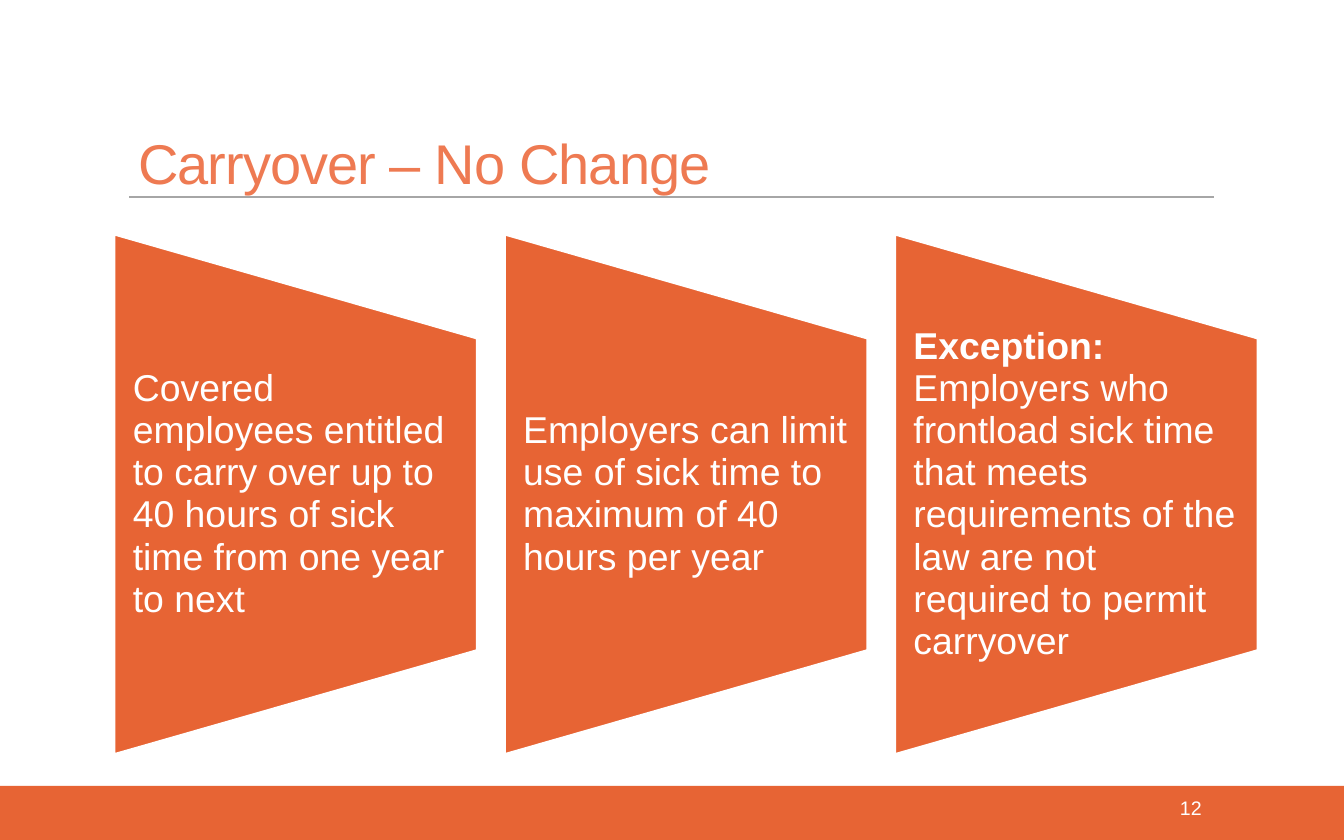
from pptx import Presentation
from pptx.dml.color import RGBColor
from pptx.enum.shapes import MSO_CONNECTOR, MSO_SHAPE
from pptx.enum.text import MSO_ANCHOR, PP_ALIGN
from pptx.oxml.ns import qn
from pptx.util import Cm, Pt
from lxml import etree

RECTANGLE = MSO_SHAPE.RECTANGLE
TRAPEZOID = MSO_SHAPE.FLOWCHART_MANUAL_OPERATION
STRAIGHT = MSO_CONNECTOR.STRAIGHT
TOP, MIDDLE = MSO_ANCHOR.TOP, MSO_ANCHOR.MIDDLE
LEFT, RIGHT = PP_ALIGN.LEFT, PP_ALIGN.RIGHT

COLORS = {"orange": "E76434", "title": "EE7A52", "rule": "A6A6A6", "white": "FFFFFF"}
FONT = "Arial"
PAGE_WIDTH, PAGE_HEIGHT = 25.4, 15.88

# Each panel is a list of (text, bold) spans
PANELS = [
    [("Covered employees entitled to carry over up to 40 hours of sick time "
      "from one year to next", False)],
    [("Employers can limit use of sick time to maximum of 40 hours per year", False)],
    [("Exception: ", True),
     ("Employers who frontload sick time that meets requirements of the law "
      "are not required to permit carryover", False)],
]


def color(name):
    return RGBColor.from_string(COLORS[name])


def add_text(page, box, spans, size, ink="white", align=LEFT, anchor=TOP,
             spacing=1.0, insets=(0.25, 0.13), tracking=None):
    """Place one paragraph of (text, bold) spans in a box given in cm."""
    frame = page.shapes.add_textbox(*map(Cm, box)).text_frame
    side, edge = map(Cm, insets)
    frame_format = {"word_wrap": True, "vertical_anchor": anchor,
                    "margin_left": side, "margin_right": side,
                    "margin_top": edge, "margin_bottom": edge}
    for name, value in frame_format.items():
        setattr(frame, name, value)
    para = frame.paragraphs[0]
    para.alignment = align
    para.line_spacing = spacing
    for text, bold in spans:
        span = para.add_run()
        span.text = text
        for name, value in {"name": FONT, "size": Pt(size), "bold": bold}.items():
            setattr(span.font, name, value)
        span.font.color.rgb = color(ink)
        if tracking is not None:
            span.font._element.set("spc", str(round(tracking * 100)))


def add_filled(page, kind, box):
    shape = page.shapes.add_shape(kind, *map(Cm, box))
    shape.shadow.inherit = False
    shape.fill.solid()
    shape.fill.fore_color.rgb = color("orange")
    shape.line.fill.background()
    return shape


def add_header(page, box):
    """Title with a thin rule along the bottom of the box."""
    left, top, width, height = box
    add_text(page, (left - 0.08, top, 16.18, 1), [("Carryover – No Change", False)],
             30, ink="title", spacing=0.85, tracking=-0.5)
    bottom = top + height
    rule = page.shapes.add_connector(
        STRAIGHT, *map(Cm, (left, bottom, left + width, bottom)))
    rule.line.color.rgb = color("rule")
    rule.line.width = Pt(1)
    etree.SubElement(rule._element.spPr, qn("a:effectLst"))


def add_panel(page, box, spans):
    """Trapezoid turned on its side, wide edge left, with upright text."""
    left, top, width, height = box
    shift = (height - width) / 2
    shape = add_filled(page, TRAPEZOID, (left - shift, top + shift, height, width))
    shape.rotation = 270
    shape.line.color.rgb = color("white")
    shape.line.width = Pt(1.25)
    text_height = height * 0.6
    text_box = (left, top + (height - text_height) / 2, width, text_height)
    add_text(page, text_box, spans, 20, anchor=MIDDLE, spacing=0.94, insets=(0.35, 0))


def add_panels(page, box, gap):
    """Equal panels side by side across the box."""
    left, top, width, height = box
    count = len(PANELS)
    panel_width = (width - gap * (count - 1)) / count
    for index, spans in enumerate(PANELS):
        panel_left = left + index * (panel_width + gap)
        add_panel(page, (panel_left, top, panel_width, height), spans)


def add_footer(page, box):
    left, top, width, height = box
    add_filled(page, RECTANGLE, box)
    add_text(page, (left + 20.22, top + 0.06, 2.74, 0.84), [("12", False)],
             10.5, align=RIGHT)


def main():
    deck = Presentation()
    deck.slide_width, deck.slide_height = Cm(PAGE_WIDTH), Cm(PAGE_HEIGHT)
    page = deck.slides.add_slide(deck.slide_layouts[6])
    add_footer(page, (0, 14.86, PAGE_WIDTH, PAGE_HEIGHT - 14.86))
    add_header(page, (2.44, 2.5, 20.5, 1.22))
    add_panels(page, (2.16, 4.43, 21.61, 9.83), gap=0.52)
    deck.save("out.pptx")


if __name__ == "__main__":
    main()
